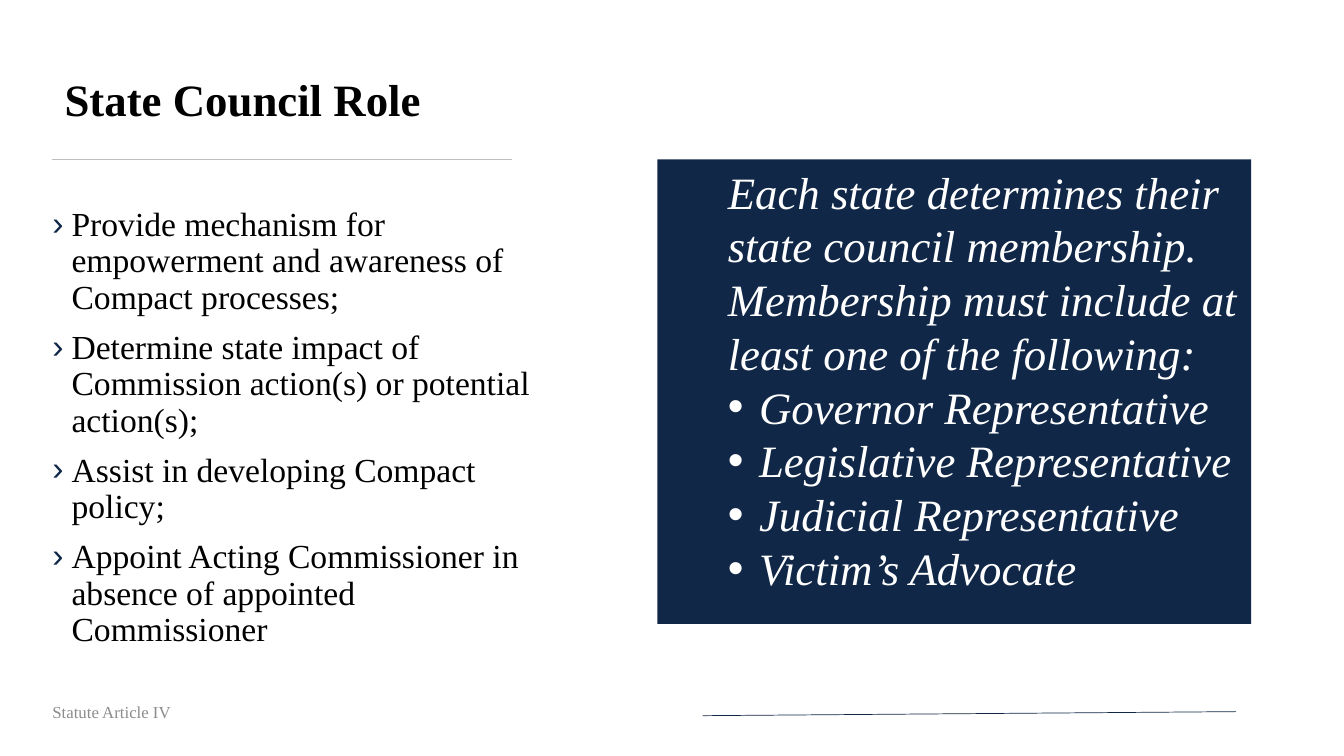
from dataclasses import dataclass, field

from lxml.etree import SubElement
from pptx import Presentation
from pptx.dml.color import RGBColor
from pptx.enum.shapes import MSO_CONNECTOR, MSO_SHAPE
from pptx.enum.text import MSO_ANCHOR, MSO_AUTO_SIZE
from pptx.oxml.ns import qn
from pptx.util import Inches, Pt

COLORS = {"navy": "102747", "black": "000000", "white": "FFFFFF",
          "grey": "8C8C8C", "rule": "BFBFBF"}
FONT = "Times New Roman"


@dataclass
class Bullet:
    char: str
    color: str
    indent: float


@dataclass
class TextBlock:
    box: tuple[float, float, float, float]
    lines: list[str]
    size: int
    color: str
    insets: tuple[float, float, float, float] = (0, 0, 0, 0)
    font: dict = field(default_factory=dict)
    frame: dict = field(default_factory=dict)
    para: dict = field(default_factory=dict)
    bullet: Bullet | None = None
    intro_lines: int = 0


@dataclass
class Rule:
    start: tuple[float, float]
    end: tuple[float, float]
    color: str


MIDDLE = {"vertical_anchor": MSO_ANCHOR.MIDDLE}
GROW = {"auto_size": MSO_AUTO_SIZE.SHAPE_TO_FIT_TEXT}

PANEL = (6.52, 1.58, 5.89, 4.61)
RULES = [
    Rule((6.97, 7.1), (12.26, 7.06), "navy"),
    Rule((0.52, 1.58), (5.08, 1.58), "rule"),
]
BLOCKS = [
    TextBlock((0.64, 0.77, 4.56, 0.49), ["State Council Role"], 32, "black",
              font={"bold": True}, frame=MIDDLE | GROW,
              para={"line_spacing": 0.9}),
    TextBlock((0.52, 2.06, 4.8, 4.49), [
        "Provide mechanism for empowerment and awareness of Compact processes;",
        "Determine state impact of Commission action(s) or potential action(s);",
        "Assist in developing Compact policy;",
        "Appoint Acting Commissioner in absence of appointed Commissioner",
    ], 24, "black", para={"line_spacing": 0.9, "space_before": Pt(10)},
        bullet=Bullet("›", "navy", 0.19)),
    TextBlock((0.52, 6.86, 4.5, 0.4), ["Statute Article IV"], 12, "grey",
              insets=(0, 0.05, 0.1, 0.05), frame=MIDDLE),
    TextBlock((7.12, 1.58, 5.5, 4.71), [
        "Each state determines their state council membership. "
        "Membership must include at least one of the following:",
        "Governor Representative",
        "Legislative Representative",
        "Judicial Representative",
        "Victim’s Advocate",
    ], 32, "white", insets=(0.1, 0.05, 0.1, 0.05), font={"italic": True},
        frame=GROW, bullet=Bullet("•", "white", 0.31), intro_lines=1),
]


def rgb(name: str) -> RGBColor:
    return RGBColor.from_string(COLORS[name])


def apply(target, values: dict) -> None:
    for name, value in values.items():
        setattr(target, name, value)


def add_panel(s, box: tuple[float, float, float, float], color: str) -> None:
    sp = s.shapes.add_shape(MSO_SHAPE.RECTANGLE, *map(Inches, box))
    sp.shadow.inherit = False
    sp.fill.solid()
    sp.fill.fore_color.rgb = rgb(color)
    sp.line.fill.background()


def add_rule(s, rule: Rule) -> None:
    cxn = s.shapes.add_connector(MSO_CONNECTOR.STRAIGHT,
                                 *map(Inches, rule.start + rule.end))
    cxn.line.color.rgb = rgb(rule.color)
    cxn.line.width = Pt(0.5)
    SubElement(cxn._element.spPr, qn("a:effectLst"))


def add_bullet(p, bullet: Bullet) -> None:
    pPr = p._p.get_or_add_pPr()
    pPr.set("marL", str(Inches(bullet.indent)))
    pPr.set("indent", str(-Inches(bullet.indent)))
    color = SubElement(pPr, qn("a:buClr"))
    SubElement(color, qn("a:srgbClr"), val=COLORS[bullet.color])
    SubElement(pPr, qn("a:buFont"), typeface="Arial")
    SubElement(pPr, qn("a:buChar"), char=bullet.char)


def add_text(s, block: TextBlock) -> None:
    tf = s.shapes.add_textbox(*map(Inches, block.box)).text_frame
    sides = ("margin_left", "margin_top", "margin_right", "margin_bottom")
    margins = dict(zip(sides, map(Inches, block.insets)))
    apply(tf, {"word_wrap": True} | margins | block.frame)
    for i, line in enumerate(block.lines):
        p = tf.add_paragraph() if i else tf.paragraphs[0]
        apply(p, block.para)
        if block.bullet and i >= block.intro_lines:
            add_bullet(p, block.bullet)
        r = p.add_run()
        r.text = line
        apply(r.font, {"name": FONT, "size": Pt(block.size)} | block.font)
        r.font.color.rgb = rgb(block.color)


def main() -> None:
    """Build the State Council Role slide."""
    prs = Presentation()
    prs.slide_width, prs.slide_height = Inches(13.33), Inches(7.5)
    s = prs.slides.add_slide(prs.slide_layouts[6])
    add_panel(s, PANEL, "navy")
    for rule in RULES:
        add_rule(s, rule)
    for block in BLOCKS:
        add_text(s, block)
    prs.save("out.pptx")


if __name__ == "__main__":
    main()
